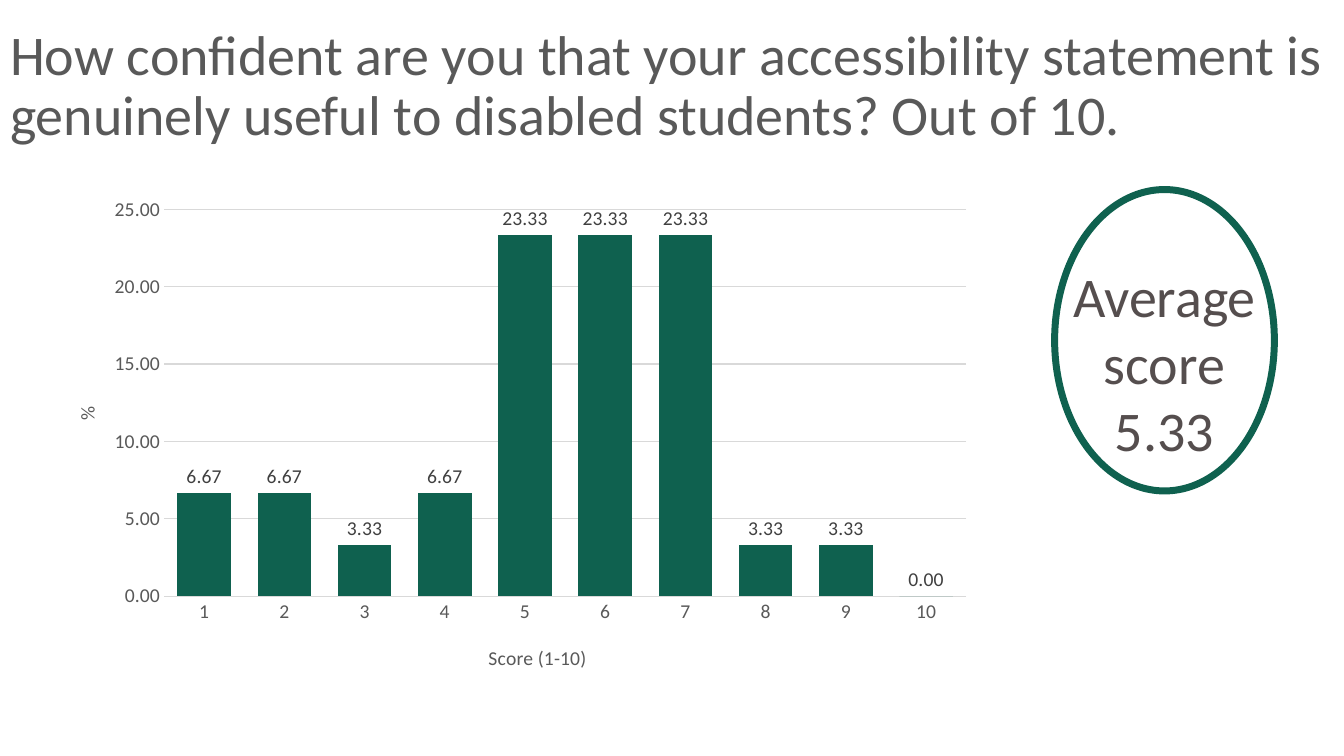
from lxml.etree import SubElement
from pptx import Presentation
from pptx.chart.data import CategoryChartData
from pptx.dml.color import RGBColor
from pptx.enum.chart import XL_CHART_TYPE, XL_LABEL_POSITION, XL_TICK_MARK
from pptx.enum.shapes import MSO_SHAPE
from pptx.enum.text import MSO_ANCHOR, MSO_AUTO_SIZE, PP_ALIGN
from pptx.oxml.ns import qn
from pptx.util import Inches, Pt

WIDTH, HEIGHT = Inches(13.33), Inches(7.5)
GREEN, GREY, GRID = "0F614F", "595959", "D9D9D9"
SCORES = [6.67, 6.67, 3.33, 6.67, 23.33, 23.33, 23.33, 3.33, 3.33, 0]


def colour(hex_value):
    """Turn a hex string into a colour."""
    return RGBColor.from_string(hex_value)


def share(left, top, width, height):
    """Turn percentages of the slide into a position and size."""
    lengths = (left, WIDTH), (top, HEIGHT), (width, WIDTH), (height, HEIGHT)
    return [int(percent * whole / 100) for percent, whole in lengths]


def style_font(font, size=14, shade=GREY):
    """Apply the slide's typeface with a size and colour."""
    font.name, font.size, font.bold = "Calibri", Pt(size), False
    font.color.rgb = colour(shade)


def style_line(line, shade, width):
    """Set the colour and width of a line."""
    line.color.rgb, line.width = colour(shade), Pt(width)


def write_text(frame, text, size=14, shade=GREY, align=PP_ALIGN.LEFT, spacing=1.0):
    """Fill a text frame with one paragraph per line of text."""
    frame.text = text
    for paragraph in frame.paragraphs:
        paragraph.alignment, paragraph.line_spacing = align, spacing
        for run in paragraph.runs:
            style_font(run.font, size, shade)


def set_layout(parent, index, **places):
    """Fix a chart part's place as shares of the chart."""
    for previous in parent.findall(qn("c:layout")):
        parent.remove(previous)
    layout = SubElement(parent, qn("c:layout"))
    parent.insert(index, layout)
    manual = SubElement(layout, qn("c:manualLayout"))
    if "w" in places:
        SubElement(manual, qn("c:layoutTarget")).set("val", "inner")
    for side in "xy":
        SubElement(manual, qn(f"c:{side}Mode")).set("val", "edge")
    for side, value in places.items():
        SubElement(manual, qn(f"c:{side}")).set("val", str(value))


def style_axis(axis, caption, x, y):
    """Format an axis and place its caption."""
    axis.major_tick_mark = axis.minor_tick_mark = XL_TICK_MARK.NONE
    style_font(axis.tick_labels.font)
    write_text(axis.axis_title.text_frame, caption, align=PP_ALIGN.CENTER)
    set_layout(axis.axis_title.element, 1, x=x, y=y)


def add_title(slide, question):
    """Place the question in the title placeholder."""
    title = slide.shapes.title
    title.left, title.top, title.width, title.height = share(0, -5.87, 100, 34.8)
    frame = title.text_frame
    frame.word_wrap, frame.auto_size = True, MSO_AUTO_SIZE.NONE
    frame.vertical_anchor = MSO_ANCHOR.MIDDLE
    write_text(frame, question, size=40, spacing=0.9)


def add_score_chart(slide):
    """Draw the percentage of answers for each score."""
    data = CategoryChartData(number_format="0.00")
    data.categories = [str(score) for score in range(1, len(SCORES) + 1)]
    data.add_series("Series 1", SCORES)
    place = share(3.08, 25.07, 70.22, 65.6)
    chart = slide.shapes.add_chart(XL_CHART_TYPE.COLUMN_CLUSTERED, *place, data).chart
    chart.has_legend = chart.has_title = False
    style_font(chart.font)

    bars = chart.plots[0]
    bars.gap_width, bars.overlap, bars.vary_by_categories = 50, -27, False
    fill = bars.series[0].format.fill
    fill.solid()
    fill.fore_color.rgb = colour(GREEN)
    bars.has_data_labels = True
    labels = bars.data_labels
    labels.show_value, labels.position = True, XL_LABEL_POSITION.OUTSIDE_END
    labels.number_format, labels.number_format_is_linked = "0.00", False
    style_font(labels.font, shade="404040")

    scores, percentages = chart.category_axis, chart.value_axis
    style_axis(scores, "Score (1-10)", 0.47, 0.91)
    style_line(scores.format.line, GRID, 0.75)
    style_axis(percentages, "%", 0.03, 0.43)
    percentages.axis_title.element.find(".//" + qn("a:bodyPr")).set("rot", "-5400000")
    percentages.minimum_scale, percentages.maximum_scale = 0, 25
    percentages.major_unit = 5
    percentages.tick_labels.number_format = "0.00"
    percentages.tick_labels.number_format_is_linked = False
    percentages.format.line.fill.background()
    style_line(percentages.major_gridlines.format.line, GRID, 0.75)
    plot_area = chart.element.find(".//" + qn("c:plotArea"))
    set_layout(plot_area, 0, x=0.13, y=0.04, w=0.85, h=0.78)


def add_average(slide, text):
    """Write the average score and ring it."""
    frame = slide.shapes.add_textbox(*share(77.34, 33.87, 18.6, 32.27)).text_frame
    frame.word_wrap = True
    write_text(frame, text, size=40, shade="554E4E", align=PP_ALIGN.CENTER)
    ring = slide.shapes.add_shape(MSO_SHAPE.OVAL, *share(78.47, 25.07, 16.35, 39.87))
    ring.shadow.inherit = False
    ring.fill.background()
    style_line(ring.line, GREEN, 5)


def main():
    """Build and save the slide."""
    deck = Presentation()
    deck.slide_width, deck.slide_height = WIDTH, HEIGHT
    slide = deck.slides.add_slide(deck.slide_layouts[5])
    add_title(slide, "How confident are you that your accessibility statement is "
                     "genuinely useful to disabled students? Out of 10.")
    add_average(slide, "Average score\n5.33")
    add_score_chart(slide)
    deck.save("out.pptx")


if __name__ == "__main__":
    main()
